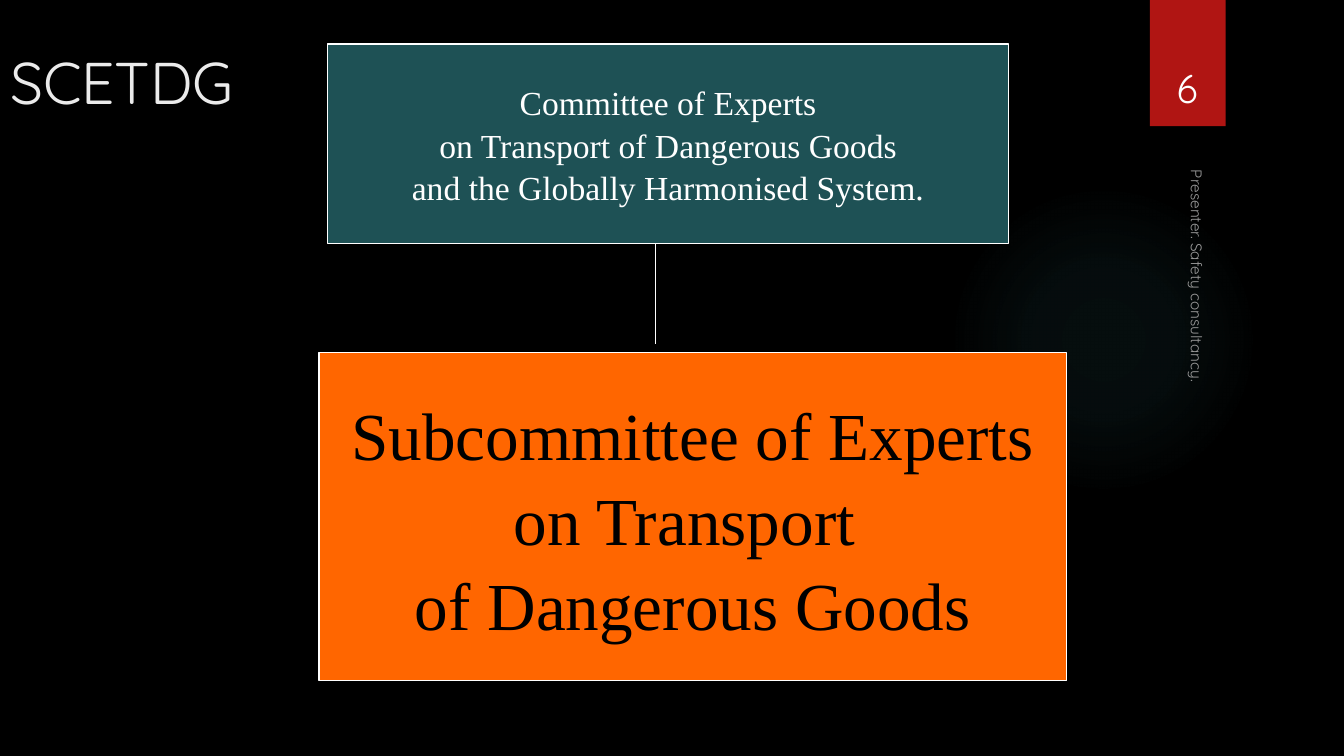
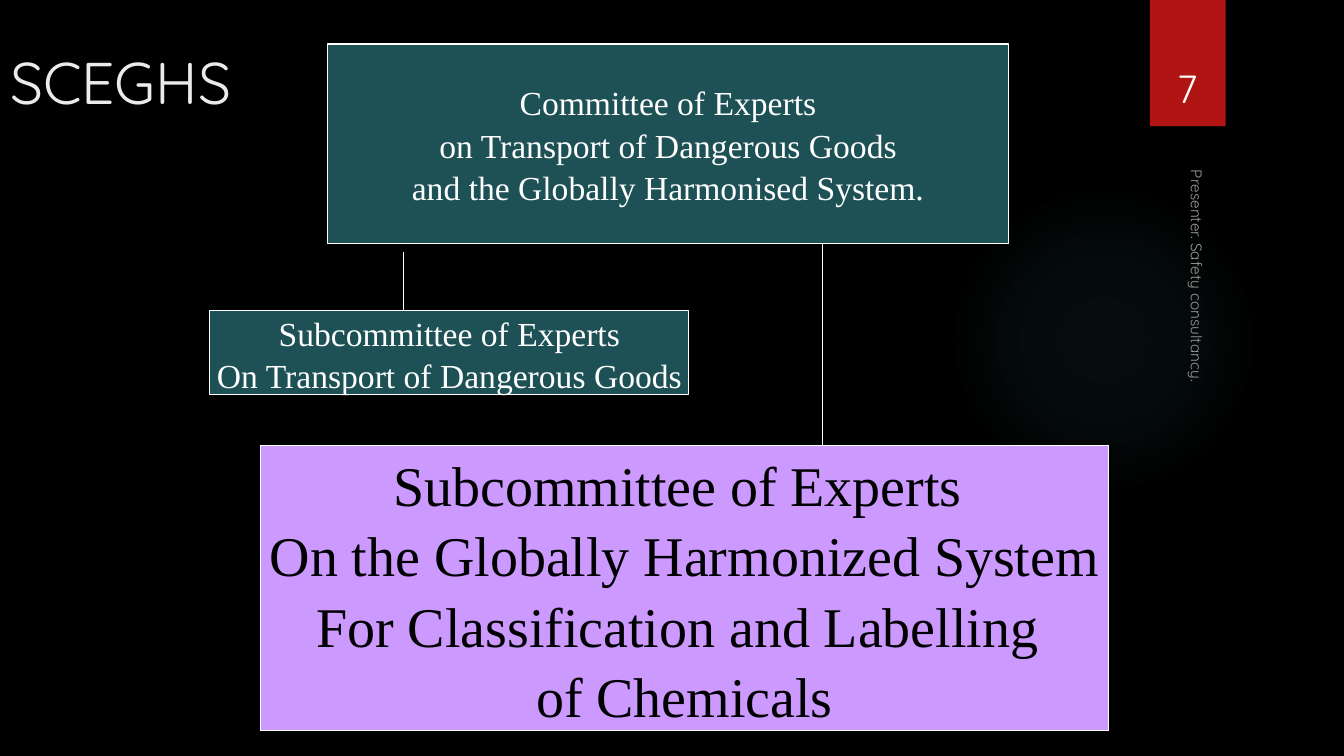
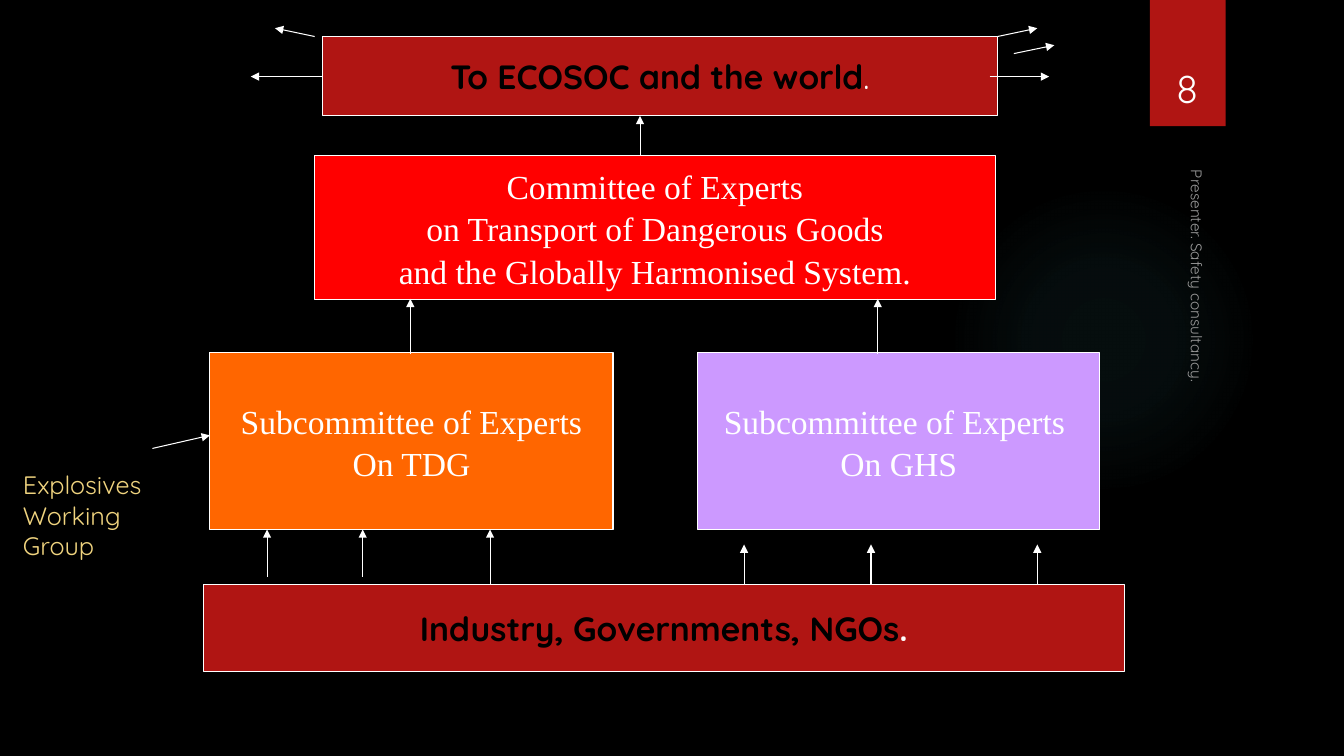
from lxml import etree
from pptx import Presentation
from pptx.dml.color import RGBColor
from pptx.enum.shapes import MSO_CONNECTOR, MSO_SHAPE
from pptx.enum.text import MSO_ANCHOR, MSO_AUTO_SIZE, PP_ALIGN
from pptx.oxml import parse_xml
from pptx.oxml.ns import nsdecls, qn
from pptx.util import Cm, Pt

LEFT, CENTER = PP_ALIGN.LEFT, PP_ALIGN.CENTER
TOP, MIDDLE, BOTTOM = MSO_ANCHOR.TOP, MSO_ANCHOR.MIDDLE, MSO_ANCHOR.BOTTOM
RECTANGLE, OVAL = MSO_SHAPE.RECTANGLE, MSO_SHAPE.OVAL
STRAIGHT = MSO_CONNECTOR.STRAIGHT
TITLE_ONLY, BLANK = 5, 6

SANS, SERIF = "Quicksand", "Times New Roman"
BLACK, WHITE, OFF_WHITE, GREY = "000000", "FFFFFF", "EBEBEB", "999999"
TEAL, ORANGE, LILAC = "1E5155", "FF6600", "CC99FF"
CRIMSON, RED, SAND, GLOW = "B01513", "FF0000", "F0D47F", "50B9C1"
GLOW_STOPS = [(0, 7), (36, 6), (69, 0)]

COMMITTEE = (
    "Committee of Experts\n"
    "on Transport of Dangerous Goods\n"
    "and the Globally Harmonised System."
)


def rgb(colour):
    return RGBColor.from_string(colour)


def place(left, top, width, height):
    return Cm(left), Cm(top), Cm(width), Cm(height)


def add_span(para, text, size, font, colour, bold=False):
    span = para.add_run()
    span.text = text
    span.font.size = Pt(size)
    span.font.name = font
    span.font.bold = bold
    span.font.color.rgb = rgb(colour)


def write_text(frame, text, size=24, font=SANS, colour=WHITE, bold=False,
               align=LEFT, anchor=TOP, wrap=True, spacing=None):
    frame.auto_size = MSO_AUTO_SIZE.NONE
    frame.word_wrap = wrap
    frame.vertical_anchor = anchor
    for index, line in enumerate(text.split("\n")):
        para = frame.add_paragraph() if index else frame.paragraphs[0]
        para.alignment = align
        if spacing:
            para.line_spacing = spacing
        add_span(para, line, size, font, colour, bold)
    return para


def add_label(page, text, bounds, **style):
    box = page.shapes.add_textbox(*place(*bounds))
    write_text(box.text_frame, text, **style)
    return box


def add_panel(page, bounds, fill, outlined=True, shape=RECTANGLE):
    panel = page.shapes.add_shape(shape, *place(*bounds))
    panel.shadow.inherit = False
    panel.fill.solid()
    panel.fill.fore_color.rgb = rgb(fill)
    if outlined:
        panel.line.color.rgb = rgb(WHITE)
        panel.line.width = Pt(0.75)
    else:
        panel.line.fill.background()
    return panel


def add_body_panel(page, text, bounds, fill, size=24, colour=WHITE):
    panel = add_panel(page, bounds, fill)
    write_text(panel.text_frame, text, size=size, font=SERIF, colour=colour,
               align=CENTER, anchor=MIDDLE, wrap=False, spacing=1.05)


def add_banner(page, text, bounds, bold_stop):
    panel = add_panel(page, bounds, CRIMSON)
    para = write_text(panel.text_frame, text, colour=BLACK, bold=True,
                      align=CENTER, anchor=MIDDLE, wrap=False)
    add_span(para, ".", 24, SANS, WHITE, bold_stop)


def add_line(page, start_x, start_y, end_x, end_y, arrow=False):
    line = page.shapes.add_connector(
        STRAIGHT, *place(start_x, start_y, end_x, end_y))
    line.line.color.rgb = rgb(WHITE)
    line.line.width = Pt(0.75)
    properties = line.element.spPr
    if arrow:
        etree.SubElement(properties.find(qn("a:ln")), qn("a:tailEnd"), type="triangle")
    etree.SubElement(properties, qn("a:effectLst"))


def apply_glow(shape):
    stops = "".join(
        f'<a:gs pos="{position * 1000}"><a:srgbClr val="{GLOW}">'
        f'<a:alpha val="{alpha * 1000}"/></a:srgbClr></a:gs>'
        for position, alpha in GLOW_STOPS)
    gradient = parse_xml(
        f'<a:gradFill {nsdecls("a")}><a:gsLst>{stops}</a:gsLst>'
        '<a:path path="circle"><a:fillToRect l="50000" t="50000" r="50000" b="50000"/>'
        '</a:path></a:gradFill>')
    properties = shape.element.spPr
    properties.replace(properties.find(qn("a:solidFill")), gradient)


def add_frame(page, number):
    glow = add_panel(page, (23.9, 4.65, 7.82, 7.82), GLOW, outlined=False, shape=OVAL)
    apply_glow(glow)
    add_panel(page, (28.98, 0, 1.91, 3.18), CRIMSON, outlined=False)
    footer = add_label(page, "Presenter. Safety consultancy.", (24.87, 8.97, 10.72, 0.84),
                       size=11, colour=GREY, anchor=BOTTOM)
    footer.rotation = 90
    add_label(page, str(number), (28.75, 0.81, 2.34, 2.13),
              size=28, align=CENTER, anchor=BOTTOM)


def add_page(deck, number, title=None):
    page = deck.slides.add_slide(deck.slide_layouts[TITLE_ONLY if title else BLANK])
    add_frame(page, number)
    if title:
        heading = page.shapes.title
        heading.left, heading.top, heading.width, heading.height = place(0, 1.02, 29.21, 3.68)
        write_text(heading.text_frame, title, size=42, colour=OFF_WHITE)
        add_body_panel(page, COMMITTEE, (8.26, 1.11, 17.15, 5.03), TEAL)
    return page


def build_transport_page(deck):
    page = add_page(deck, 6, "SCETDG")
    add_body_panel(page, "Subcommittee of Experts\non Transport \nof Dangerous Goods",
                   (8.04, 8.89, 18.84, 8.26), ORANGE, size=48, colour=BLACK)
    add_line(page, 16.51, 6.14, 16.51, 8.68)


def build_harmonised_page(deck):
    page = add_page(deck, 7, "SCEGHS")
    add_body_panel(page, "Subcommittee of Experts\nOn Transport of Dangerous Goods",
                   (5.29, 7.83, 12.07, 2.12), TEAL)
    add_line(page, 10.16, 6.35, 10.16, 7.83)
    add_body_panel(page,
                   "Subcommittee of Experts \nOn the Globally Harmonized System\n"
                   "For Classification and Labelling \nof Chemicals",
                   (6.56, 11.22, 21.38, 7.2), LILAC, size=40, colour=BLACK)
    add_line(page, 20.74, 6.14, 20.74, 11.22)


def build_structure_page(deck):
    page = add_page(deck, 8)
    add_body_panel(page, COMMITTEE, (7.93, 3.93, 17.15, 3.61), RED)
    add_body_panel(page, "Subcommittee of Experts\nOn TDG", (5.29, 8.89, 10.16, 4.45), ORANGE)
    add_body_panel(page, "Subcommittee of Experts \nOn GHS", (17.58, 8.89, 10.14, 4.45), LILAC)
    add_banner(page, "Industry, Governments, NGOs", (5.13, 14.73, 23.2, 2.2), bold_stop=True)
    add_banner(page, "To ECOSOC and the world", (8.13, 0.92, 17, 2), bold_stop=False)
    add_label(page, "Explosives Working Group", (0.33, 11.71, 3.99, 2.57),
              size=18, colour=SAND)

    upward = [
        (6.73, 14.53, 13.34), (9.14, 14.53, 13.34), (12.35, 14.73, 13.34),
        (18.75, 14.73, 13.72), (21.95, 14.73, 13.72), (26.14, 14.73, 13.72),
        (10.34, 8.91, 7.53), (22.12, 8.91, 7.53), (16.13, 3.93, 2.92),
    ]
    for x, start_y, end_y in upward:
        add_line(page, x, start_y, x, end_y, arrow=True)

    outward = [
        (24.94, 1.93, 26.44, 1.93), (8.13, 1.93, 6.32, 1.93),
        (25.14, 0.92, 26.14, 0.71), (7.93, 0.92, 6.93, 0.71),
        (25.55, 1.35, 26.57, 1.14), (3.84, 11.3, 5.29, 10.97),
    ]
    for ends in outward:
        add_line(page, *ends, arrow=True)


def main():
    deck = Presentation()
    deck.slide_width, deck.slide_height = Cm(33.87), Cm(19.05)
    background = deck.slide_master.background.fill
    background.solid()
    background.fore_color.rgb = rgb(BLACK)
    build_transport_page(deck)
    build_harmonised_page(deck)
    build_structure_page(deck)
    deck.save("out.pptx")


if __name__ == "__main__":
    main()
